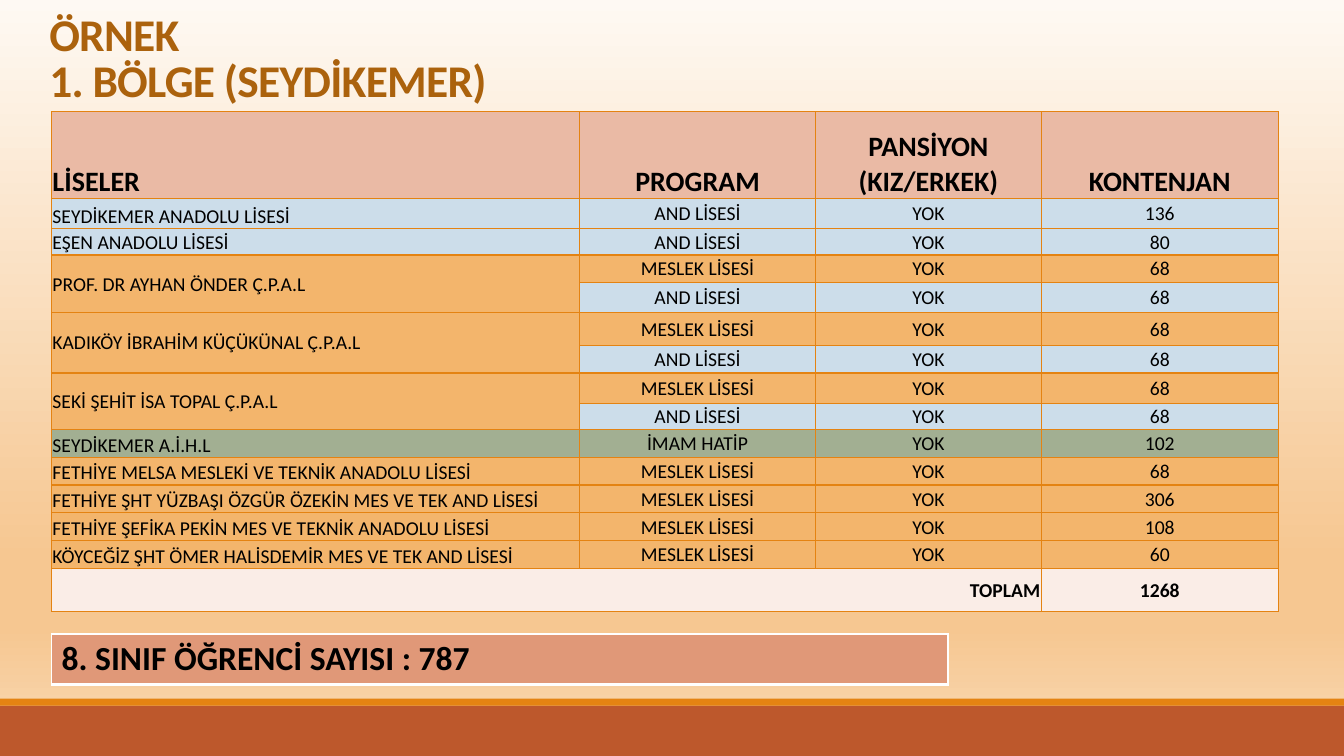
from dataclasses import dataclass
from copy import deepcopy
from enum import Enum
from typing import NamedTuple

from lxml.etree import SubElement
from pptx import Presentation
from pptx.dml.color import RGBColor
from pptx.enum.shapes import MSO_SHAPE
from pptx.enum.text import MSO_ANCHOR, PP_ALIGN
from pptx.oxml.ns import qn
from pptx.util import Inches, Pt

SLIDE_WIDTH = Inches(13.33)
SLIDE_HEIGHT = Inches(7.5)
FONT = "Calibri"

BLACK = RGBColor(0x00, 0x00, 0x00)
WHITE = RGBColor(0xFF, 0xFF, 0xFF)
BROWN = RGBColor(0xAB, 0x62, 0x0D)
ORANGE = RGBColor(0xE4, 0x83, 0x12)
RUST = RGBColor(0xBD, 0x58, 0x2C)
SALMON = RGBColor(0xE0, 0x98, 0x78)
HEADER_PINK = RGBColor(0xEA, 0xBA, 0xA5)
TOTAL_PINK = RGBColor(0xFA, 0xED, 0xE7)
LIGHT_BLUE = RGBColor(0xCC, 0xDD, 0xEA)
LIGHT_ORANGE = RGBColor(0xF3, 0xB5, 0x6C)
SAGE = RGBColor(0xA2, 0xAF, 0x92)
BACKGROUND_STOPS = (
    (0, RGBColor(0xFE, 0xF9, 0xF3)),
    (0.74, RGBColor(0xF6, 0xC7, 0x91)),
    (0.83, RGBColor(0xF6, 0xC7, 0x91)),
    (1, RGBColor(0xF9, 0xDA, 0xB6)),
)


class Program(Enum):
    ANATOLIAN = ("AND LİSESİ", LIGHT_BLUE)
    VOCATIONAL = ("MESLEK LİSESİ", LIGHT_ORANGE)
    RELIGIOUS = ("İMAM HATİP", SAGE)


class Offer(NamedTuple):
    program: Program
    quota: int
    height: float


@dataclass(frozen=True)
class School:
    name: str
    offers: tuple[Offer, ...]


class Area(NamedTuple):
    left: float
    top: float
    width: float
    height: float

    def lengths(self) -> tuple[int, int, int, int]:
        return across(self.left), down(self.top), across(self.width), down(self.height)


class Border(NamedTuple):
    color: RGBColor
    left: float = 1
    right: float = 1
    top: float = 1
    bottom: float = 1


HEADERS = ("LİSELER", "PROGRAM", "PANSİYON (KIZ/ERKEK)", "KONTENJAN")
COLUMN_SHARES = (39.3, 17.55, 16.8, 17.63)
HEADER_SHARE = 11.47
TOTAL_SHARE = 5.73
ROW_SHARE = 3.68
ANATOLIAN, VOCATIONAL, RELIGIOUS = Program
SCHOOLS = (
    School("SEYDİKEMER ANADOLU LİSESİ", (Offer(ANATOLIAN, 136, 4),)),
    School("EŞEN ANADOLU LİSESİ", (Offer(ANATOLIAN, 80, 3.47),)),
    School("PROF. DR AYHAN ÖNDER Ç.P.A.L",
           (Offer(VOCATIONAL, 68, 3.6), Offer(ANATOLIAN, 68, 4))),
    School("KADIKÖY İBRAHİM KÜÇÜKÜNAL Ç.P.A.L",
           (Offer(VOCATIONAL, 68, 4.4), Offer(ANATOLIAN, 68, 3.6))),
    School("SEKİ ŞEHİT İSA TOPAL Ç.P.A.L",
           (Offer(VOCATIONAL, 68, 4), Offer(ANATOLIAN, 68, 3.47))),
    School("SEYDİKEMER A.İ.H.L", (Offer(RELIGIOUS, 102, ROW_SHARE),)),
    School("FETHİYE MELSA MESLEKİ VE TEKNİK ANADOLU LİSESİ",
           (Offer(VOCATIONAL, 68, ROW_SHARE),)),
    School("FETHİYE ŞHT YÜZBAŞI ÖZGÜR ÖZEKİN MES VE TEK AND LİSESİ",
           (Offer(VOCATIONAL, 306, ROW_SHARE),)),
    School("FETHİYE ŞEFİKA PEKİN MES VE TEKNİK ANADOLU LİSESİ",
           (Offer(VOCATIONAL, 108, ROW_SHARE),)),
    School("KÖYCEĞİZ ŞHT ÖMER HALİSDEMİR MES VE TEK AND LİSESİ",
           (Offer(VOCATIONAL, 60, ROW_SHARE),)),
)


def across(percent: float) -> int:
    return round(SLIDE_WIDTH * percent / 100)


def down(percent: float) -> int:
    return round(SLIDE_HEIGHT * percent / 100)


def write(text_frame, text: str, *, size: float = 14, bold: bool = False,
          color: RGBColor = BLACK, align: PP_ALIGN = PP_ALIGN.LEFT,
          line_spacing: float = 1, tracking: float = 0) -> None:
    paragraph = text_frame.paragraphs[0]
    paragraph.text = text
    paragraph.alignment = align
    paragraph.line_spacing = line_spacing
    for run in paragraph.runs:
        run.font.name = FONT
        run.font.size = Pt(size)
        run.font.bold = bold
        run.font.color.rgb = color
        if tracking:
            run.font._element.set("spc", str(round(tracking * 100)))


def paint_background(slide) -> None:
    fill = slide.background.fill
    fill.gradient()
    fill.gradient_angle = 270
    stop_list = next(slide.element.iter(qn("a:gsLst")))
    while len(stop_list) < len(BACKGROUND_STOPS):
        stop_list.append(deepcopy(stop_list[0]))
    for stop, (position, color) in zip(fill.gradient_stops, BACKGROUND_STOPS):
        stop.position = position
        stop.color.rgb = color


def add_band(slide, area: Area, color: RGBColor) -> None:
    shape = slide.shapes.add_shape(MSO_SHAPE.RECTANGLE, *area.lengths())
    shape.shadow.inherit = False
    shape.fill.solid()
    shape.fill.fore_color.rgb = color
    shape.line.fill.background()


def add_plain_table(slide, area: Area, columns: tuple, rows: tuple):
    frame = slide.shapes.add_table(len(rows), len(columns), *area.lengths())
    table = frame.table
    table.first_row = False
    table.horz_banding = False
    for column, share in zip(table.columns, columns):
        column.width = across(share)
    for row, share in zip(table.rows, rows):
        row.height = down(share)
    return table


def paint_cell(cell, fill: RGBColor, border: Border) -> None:
    cell.fill.solid()
    cell.fill.fore_color.rgb = fill
    properties = cell._tc.get_or_add_tcPr()
    sides = (("a:lnL", border.left), ("a:lnR", border.right),
             ("a:lnT", border.top), ("a:lnB", border.bottom))
    for index, (tag, width) in enumerate(sides):
        line = SubElement(properties, qn(tag), w=str(Pt(width)))
        solid = SubElement(line, qn("a:solidFill"))
        SubElement(solid, qn("a:srgbClr"), val=str(border.color))
        properties.insert(index, line)


def fill_cell(cell, text: str, fill: RGBColor, *, anchor: MSO_ANCHOR = MSO_ANCHOR.MIDDLE,
              align: PP_ALIGN = PP_ALIGN.CENTER, size: float = 14, bold: bool = False) -> None:
    paint_cell(cell, fill, Border(ORANGE))
    cell.margin_left = cell.margin_right = cell.margin_top = Inches(0.01)
    cell.margin_bottom = 0
    cell.vertical_anchor = anchor
    write(cell.text_frame, text, size=size, bold=bold, align=align)


def add_quota_table(slide) -> None:
    offer_heights = tuple(offer.height for school in SCHOOLS for offer in school.offers)
    heights = (HEADER_SHARE, *offer_heights, TOTAL_SHARE)
    area = Area(3.83, 14.8, sum(COLUMN_SHARES), sum(heights))
    table = add_plain_table(slide, area, COLUMN_SHARES, heights)
    for column, header in enumerate(HEADERS):
        fill_cell(table.cell(0, column), header, HEADER_PINK, anchor=MSO_ANCHOR.BOTTOM,
                  align=PP_ALIGN.CENTER if column else PP_ALIGN.LEFT, size=20, bold=True)
    row = 1
    for school in SCHOOLS:
        first_row, shared = row, len(school.offers) > 1
        for offer in school.offers:
            label, color = offer.program.value
            paint_cell(table.cell(row, 0), school.offers[0].program.value[1], Border(ORANGE))
            for column, text in enumerate((label, "YOK", str(offer.quota)), start=1):
                fill_cell(table.cell(row, column), text, color)
            row += 1
        name_cell = table.cell(first_row, 0)
        if shared:
            name_cell.merge(table.cell(row - 1, 0))
        name_cell.margin_left = name_cell.margin_right = name_cell.margin_top = Inches(0.01)
        name_cell.margin_bottom = 0
        name_cell.vertical_anchor = MSO_ANCHOR.MIDDLE if shared else MSO_ANCHOR.BOTTOM
        write(name_cell.text_frame, school.name)
    for column in (1, 2):
        paint_cell(table.cell(row, column), TOTAL_PINK, Border(ORANGE))
    table.cell(row, 0).merge(table.cell(row, 2))
    fill_cell(table.cell(row, 0), "TOPLAM", TOTAL_PINK, align=PP_ALIGN.RIGHT, bold=True)
    fill_cell(table.cell(row, 3), "1268", TOTAL_PINK, bold=True)


def main() -> None:
    presentation = Presentation()
    presentation.slide_width = SLIDE_WIDTH
    presentation.slide_height = SLIDE_HEIGHT
    slide = presentation.slides.add_slide(presentation.slide_layouts[6])
    paint_background(slide)
    add_band(slide, Area(0, 93.33, 100, 6.67), RUST)
    add_band(slide, Area(0, 92.4, 100, 0.93), ORANGE)
    title = slide.shapes.add_textbox(*Area(2.93, 1.6, 34.2, 13.2).lengths()).text_frame
    title.word_wrap = True
    title.vertical_anchor = MSO_ANCHOR.BOTTOM
    write(title, "ÖRNEK\v1. BÖLGE (SEYDİKEMER)", size=32.4, bold=True, color=BROWN,
          line_spacing=0.85, tracking=-0.5)
    add_quota_table(slide)
    student_area = Area(3.83, 83.87, 66.7, 6.67)
    student_table = add_plain_table(slide, student_area, (66.7,), (6.67,))
    student_cell = student_table.cell(0, 0)
    paint_cell(student_cell, SALMON, Border(WHITE, bottom=3))
    write(student_cell.text_frame, "8. SINIF ÖĞRENCİ SAYISI : 787", size=24, bold=True)


    presentation.save("out.pptx")


if __name__ == "__main__":
    main()
